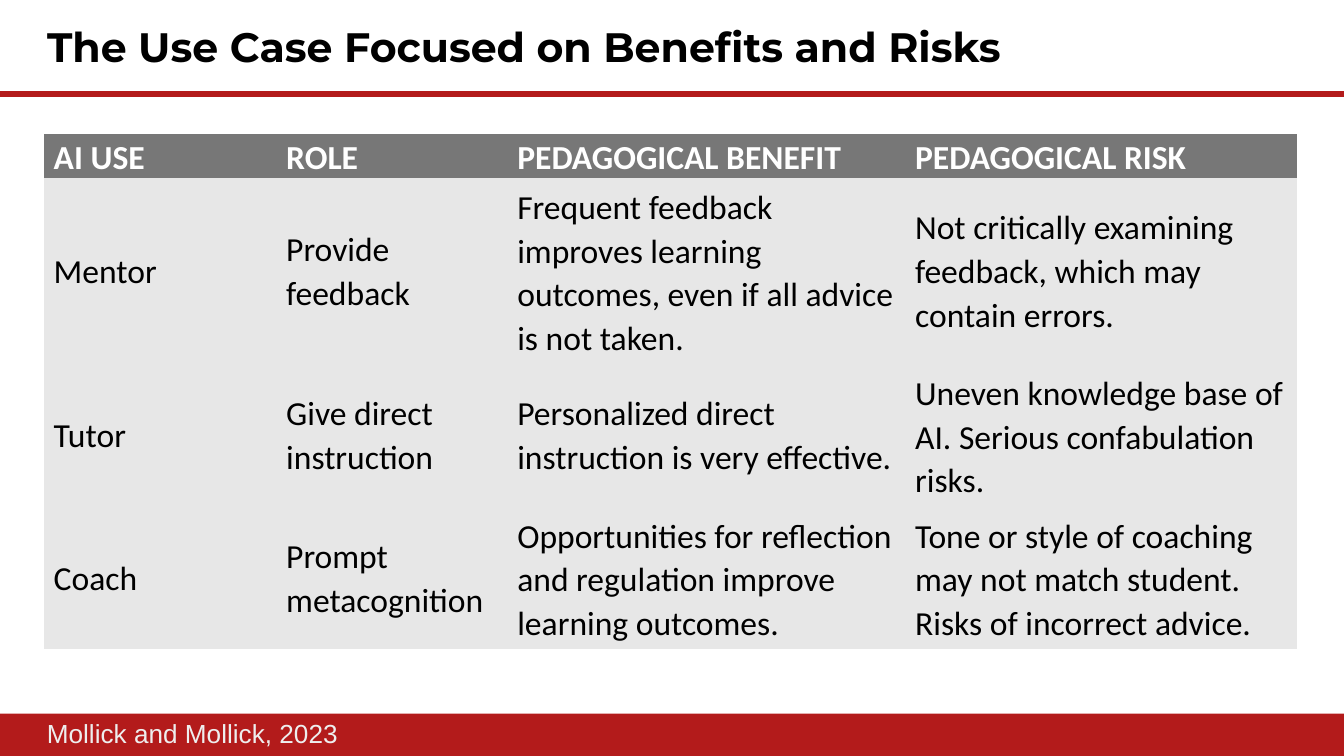
from lxml.etree import SubElement
from pptx import Presentation
from pptx.dml.color import RGBColor
from pptx.enum.shapes import MSO_CONNECTOR, MSO_SHAPE
from pptx.enum.text import MSO_ANCHOR, PP_ALIGN
from pptx.oxml.ns import qn
from pptx.util import Inches, Pt

# Content
TITLE = "The Use Case Focused on Benefits and Risks"
SOURCE = "Mollick and Mollick, 2023"
ROWS = [
    ("AI USE", "ROLE", "PEDAGOGICAL BENEFIT", "PEDAGOGICAL RISK"),
    ("Mentor", "Provide feedback",
     "Frequent feedback improves learning outcomes, even if all advice is not taken.",
     "Not critically examining feedback, which may contain errors."),
    ("Tutor", "Give direct instruction",
     "Personalized direct instruction is very effective.",
     "Uneven knowledge base of AI. Serious confabulation risks."),
    ("Coach", "Prompt metacognition",
     "Opportunities for reflection and regulation improve learning outcomes.",
     "Tone or style of coaching may not match student. Risks of incorrect advice."),
]
COL_WIDTHS = [1.73, 1.72, 2.96, 2.91]
ROW_HEIGHTS = [0.32, 1.38, 1.06, 1.06]

# Colours
RED = RGBColor(0xB3, 0x1B, 0x1B)
BLACK = RGBColor(0, 0, 0)
WHITE = RGBColor(0xFF, 0xFF, 0xFF)
PALE = RGBColor(0xEE, 0xEE, 0xEE)
HEADER_GREY = RGBColor(0x77, 0x77, 0x77)
BODY_GREY = RGBColor(0xE7, 0xE7, 0xE7)

# Text formats
TITLE_FONT = {"name": "Montserrat", "size": Pt(22), "bold": True}
SOURCE_FONT = {"name": "Arial", "size": Pt(14)}
HEADER_FONT = {"name": "Calibri", "size": Pt(18), "bold": True}
BODY_FONT = {**HEADER_FONT, "bold": False}


def write(tf, text, font, color):
    p = tf.paragraphs[0]
    p.alignment = PP_ALIGN.LEFT
    r = p.add_run()
    r.text = text
    for name, value in font.items():
        setattr(r.font, name, value)
    r.font.color.rgb = color
    return p


def box(x, y, w, h):
    return [Inches(v) for v in (x, y, w, h)]


# Widescreen 16:9 slide
prs = Presentation()
prs.slide_width, prs.slide_height = Inches(10), Inches(10 * 9 / 16)
s = prs.slides.add_slide(prs.slide_layouts[5])

# Footer band and title rule
band = s.shapes.add_shape(MSO_SHAPE.RECTANGLE, *box(0, 5.31, 10, 0.32))
band.shadow.inherit = False
band.fill.solid()
band.fill.fore_color.rgb = RED
band.line.fill.background()

rule = s.shapes.add_connector(MSO_CONNECTOR.STRAIGHT, *box(10, 0.7, 0, 0.7))
rule.line.color.rgb = RED
rule.line.width = Pt(3)
SubElement(rule._element.spPr, qn("a:effectLst"))

# Title
title = s.shapes.title
title.left, title.top, title.width, title.height = box(0.25, 0.06, 9.32, 0.63)
tf = title.text_frame
tf.margin_left = tf.margin_right = tf.margin_top = tf.margin_bottom = Inches(0.1)
tf.vertical_anchor = MSO_ANCHOR.TOP
write(tf, TITLE, TITLE_FONT, BLACK)

# Source credit
credit = s.shapes.add_textbox(*box(0.25, 5.29, 4.32, 0.34))
tf = credit.text_frame
tf.word_wrap = True
tf.margin_left = Inches(0.1)
write(tf, SOURCE, SOURCE_FONT, PALE)

# Table of uses
table = s.shapes.add_table(
    len(ROWS), len(COL_WIDTHS),
    *box(0.33, 1, sum(COL_WIDTHS), sum(ROW_HEIGHTS))).table
table.horz_banding = False
style_id = table._tbl.tblPr.find(qn("a:tableStyleId"))
style_id.text = "{2D5ABB26-0587-4C30-8999-92F81FD0307C}"  # no style, no grid
for col, width in zip(table.columns, COL_WIDTHS):
    col.width = Inches(width)
for i, (row, height) in enumerate(zip(table.rows, ROW_HEIGHTS)):
    row.height = Inches(height)
    fill, font, color, margin = (
        (BODY_GREY, BODY_FONT, BLACK, 0.05) if i else (HEADER_GREY, HEADER_FONT, WHITE, 0))
    for cell, text in zip(row.cells, ROWS[i]):
        cell.fill.solid()
        cell.fill.fore_color.rgb = fill
        cell.vertical_anchor = MSO_ANCHOR.MIDDLE
        cell.margin_left = cell.margin_right = Inches(0.07)
        cell.margin_top = cell.margin_bottom = Inches(margin)
        write(cell.text_frame, text, font, color).line_spacing = 1.07

prs.save("out.pptx")
